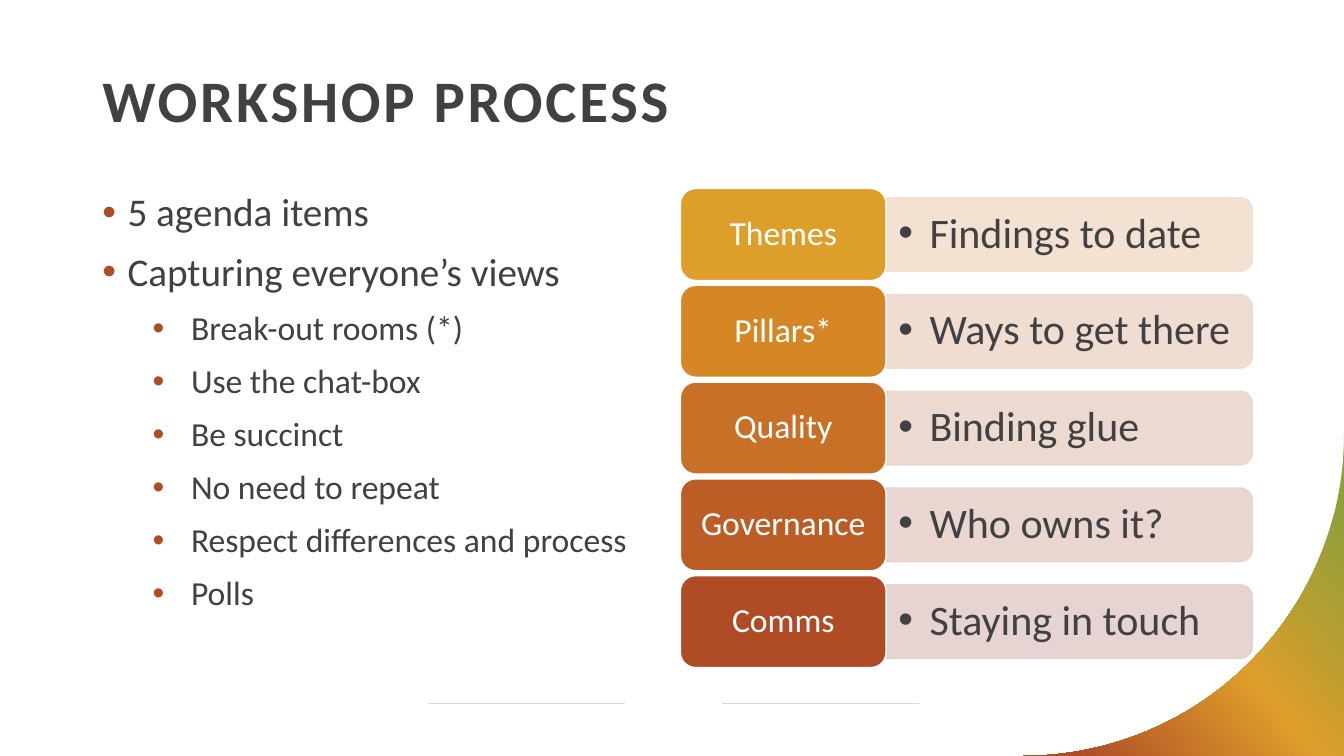
from copy import deepcopy
from math import cos, pi, sin

from lxml.etree import SubElement as sub
from pptx import Presentation
from pptx.dml.color import RGBColor as RGB
from pptx.enum.shapes import MSO_CONNECTOR as LINK, MSO_SHAPE as FORM
from pptx.enum.text import MSO_ANCHOR as ANCHOR, PP_ALIGN as ALIGN
from pptx.oxml.ns import qn
from pptx.util import Emu, Inches, Pt

WHITE = RGB(0xFF, 0xFF, 0xFF)
INK = RGB(0x41, 0x40, 0x42)
RULE = RGB(0xD9, 0xD8, 0xDA)
GREEN = RGB(0x91, 0x9F, 0x39)
GOLD = RGB(0xDD, 0x9E, 0x2A)
AMBER = RGB(0xD5, 0x87, 0x25)
ORANGE = RGB(0xC8, 0x71, 0x26)
COPPER = RGB(0xBC, 0x5D, 0x26)
RUST = RGB(0xAF, 0x4C, 0x26)
SAND = RGB(0xF2, 0xDF, 0xCD)
PEACH = RGB(0xEF, 0xDA, 0xCD)
BLUSH = RGB(0xEB, 0xD6, 0xCC)
ROSE = RGB(0xE8, 0xD2, 0xCD)
MAUVE = RGB(0xE3, 0xD0, 0xCD)

COLS, ROWS = 160, 90
POINTS = [
    ("5 agenda items", 0),
    ("Capturing everyone’s views", 0),
    ("Break-out rooms (*)", 1),
    ("Use the chat-box", 1),
    ("Be succinct", 1),
    ("No need to repeat", 1),
    ("Respect differences and process", 1),
    ("Polls", 1),
]
ITEMS = [
    ("Themes", "Findings to date", GOLD, SAND),
    ("Pillars*", "Ways to get there", AMBER, PEACH),
    ("Quality", "Binding glue", ORANGE, BLUSH),
    ("Governance", "Who owns it?", COPPER, ROSE),
    ("Comms", "Staying in touch", RUST, MAUVE),
]


class Board:
    face = "Calibri"

    def __init__(self, deck):
        self.slide = deck.slides.add_slide(deck.slide_layouts[6])
        self.shapes = self.slide.shapes
        self.col = deck.slide_width / COLS
        self.row = deck.slide_height / ROWS

    def spot(self, x, y):
        return Emu(round(x * self.col)), Emu(round(y * self.row))

    def style(self, para, size, color, bold=False):
        para.line_spacing = 0.9
        for run in para.runs:
            run.font.name = self.face
            run.font.size = Pt(size)
            run.font.bold = bold
            run.font.color.rgb = color

    def bullet(self, para, left, hang, color):
        props = para._p.get_or_add_pPr()
        props.set("marL", str(Inches(left)))
        props.set("indent", str(-Inches(hang)))
        tint = sub(sub(props, qn("a:buClr")), qn("a:srgbClr"))
        tint.set("val", str(color))
        sub(props, qn("a:buFont")).set("typeface", "Arial")
        sub(props, qn("a:buChar")).set("char", "•")

    def text(self, x, y, w, h, words):
        frame = self.shapes.add_textbox(*self.spot(x, y), *self.spot(w, h)).text_frame
        frame.word_wrap = True
        frame.text = words
        return frame

    def title(self, x, y, w, h, words):
        para = self.text(x, y, w, h, words).paragraphs[0]
        self.style(para, 42, INK, True)
        para.runs[0]._r.get_or_add_rPr().set("spc", "200")

    def points(self, x, y, w, h, items):
        frame = self.text(x, y, w, h, "\n".join(words for words, level in items))
        for para, (words, level) in zip(frame.paragraphs, items):
            para.level = level
            left, hang, size = ((0.25, 0.25, 28), (0.88, 0.38, 24))[level]
            self.bullet(para, left, hang, RUST)
            para.space_after = Pt(12)
            self.style(para, size, INK)

    def shape(self, form, x, y, w, h, fill, line):
        shape = self.shapes.add_shape(form, *self.spot(x, y), *self.spot(w, h))
        shape.shadow.inherit = False
        shape.fill.solid()
        shape.fill.fore_color.rgb = fill
        shape.line.color.rgb = line
        shape.line.width = Pt(1)
        return shape

    def band(self, x, y, w, h, words, fill):
        mid, turn = x + w / 2, y + h / 2
        shape = self.shape(FORM.ROUND_2_SAME_RECTANGLE,
                           mid - h / 2, turn - w / 2, h, w, fill, fill)
        shape.rotation = 90
        for tint in shape._element.spPr.iter(qn("a:srgbClr")):
            sub(tint, qn("a:alpha")).set("val", "90000")
        frame = self.text(x, y, w, h, words)
        frame.vertical_anchor = ANCHOR.MIDDLE
        frame.margin_left = frame.margin_right = Inches(0.12)
        frame.margin_top = frame.margin_bottom = Inches(0.06)
        para = frame.paragraphs[0]
        para.level = 1
        self.bullet(para, 0.31, 0.31, INK)
        self.style(para, 30, INK)

    def label(self, x, y, w, h, words, fill):
        frame = self.shape(FORM.ROUNDED_RECTANGLE, x, y, w, h, fill, WHITE).text_frame
        frame.word_wrap = True
        frame.vertical_anchor = ANCHOR.MIDDLE
        frame.text = words
        frame.paragraphs[0].alignment = ALIGN.CENTER
        self.style(frame.paragraphs[0], 24, WHITE)

    def rule(self, x, y, w):
        line = self.shapes.add_connector(LINK.STRAIGHT, *self.spot(x, y), *self.spot(x + w, y))
        line.line.color.rgb = RULE
        line.line.width = Pt(0.5)
        sub(line._element.spPr, qn("a:effectLst"))

    def corner(self, size, stops, steps=90):
        x, y = COLS - size, ROWS - size
        turns = [pi / 2 * step / steps for step in range(steps + 1)]
        arc = [self.spot(x + size * cos(turn), y + size * sin(turn)) for turn in turns]
        path = self.shapes.build_freeform(*self.spot(COLS, ROWS), scale=1.0)
        path.add_line_segments(arc, close=True)
        shape = path.convert_to_shape()
        shape.shadow.inherit = False
        shape.line.fill.background()
        shape.fill.gradient()
        shape.fill.gradient_angle = 220
        chain = shape._element.spPr.find(".//" + qn("a:gsLst"))
        chain.append(deepcopy(chain[0]))
        for stop, (place, color) in zip(shape.fill.gradient_stops, stops):
            stop.position = place
            stop.color.rgb = color


def main():
    deck = Presentation()
    deck.slide_width, deck.slide_height = Emu(12192000), Emu(6858000)
    board = Board(deck)
    for x in (51, 86):
        board.rule(x, 83.7, 23.4)
    board.corner(38.2, [(0.12, GREEN), (0.5, GOLD), (0.91, RUST)])
    board.points(11, 22.4, 68, 57.2, POINTS)
    board.title(11, 7.9, 138, 12.2, "WORKSHOP PROCESS")
    for place, (name, words, fill, tint) in enumerate(ITEMS):
        y = 22.45 + 11.52 * place
        board.band(105.5, y + 1.1, 43.6, 8.76, words, tint)
        board.label(81, y, 24.5, 10.95, name, fill)
    deck.save("out.pptx")


if __name__ == "__main__":
    main()
